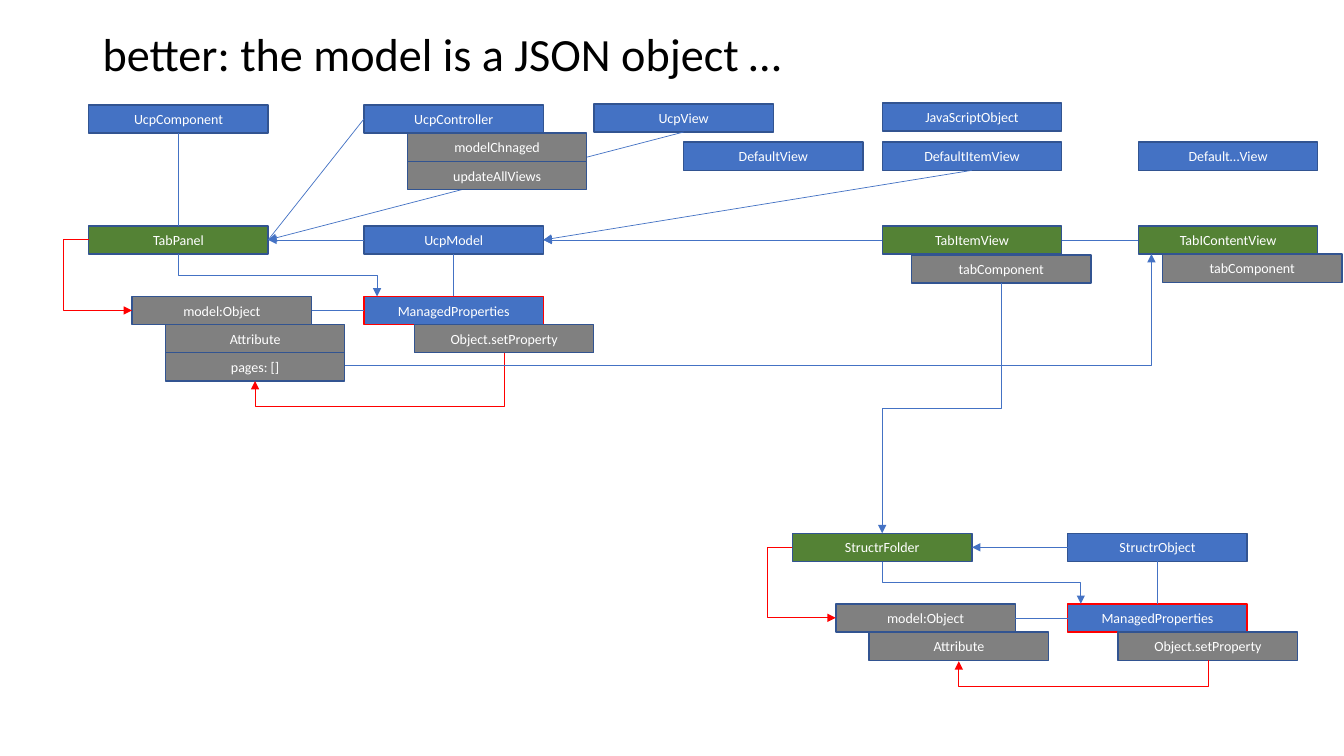
from lxml import etree
from pptx import Presentation
from pptx.dml.color import RGBColor
from pptx.enum import shapes, text
from pptx.oxml import ns
from pptx.util import Inches, Pt

COLORS = {"blue": "4472C4", "green": "548235", "gray": "808080", "edge": "325491",
          "red": "FF0000", "white": "FFFFFF", "black": "000000"}
W, H = 1.78, 0.28
TOP, LEFT, BOTTOM, RIGHT = range(4)


def rgb(name):
    return RGBColor.from_string(COLORS[name])


def add_run(p, wording, size, color):
    r = p.add_run()
    r.text = wording
    r.font.name = "Calibri"
    r.font.size = Pt(size)
    r.font.color.rgb = rgb(color)


def add_title(s, wording):
    sp = s.shapes.add_textbox(Inches(0.92), Inches(0.4), Inches(11.5), Inches(0.53))
    tf = sp.text_frame
    tf.word_wrap = True
    tf.margin_top = tf.margin_bottom = 0
    p = tf.paragraphs[0]
    p.line_spacing = 0.7
    add_run(p, wording, 33, "black")


def add_box(s, wording, x, y, fill="blue", edge="edge"):
    sp = s.shapes.add_shape(shapes.MSO_SHAPE.RECTANGLE,
                            Inches(x), Inches(y), Inches(W), Inches(H))
    sp.shadow.inherit = False
    sp.fill.solid()
    sp.fill.fore_color.rgb = rgb(fill)
    sp.line.color.rgb = rgb(edge)
    sp.line.width = Pt(1)
    tf = sp.text_frame
    tf.margin_top = tf.margin_bottom = 0
    tf.vertical_anchor = text.MSO_ANCHOR.MIDDLE
    p = tf.paragraphs[0]
    p.alignment = text.PP_ALIGN.CENTER
    add_run(p, wording, 10, "white")
    return sp


def style_line(c, color, arrow):
    c.line.color.rgb = rgb(color)
    c.line.width = Pt(0.5)
    if arrow:
        ln = c.line._get_or_add_ln()
        etree.SubElement(ln, ns.qn("a:tailEnd"), type="triangle")
    etree.SubElement(c._element.spPr, ns.qn("a:effectLst"))


def link(s, start, start_side, end, end_side, arrow=False):
    c = s.shapes.add_connector(shapes.MSO_CONNECTOR.STRAIGHT, 0, 0, 0, 0)
    c.begin_connect(start, start_side)
    c.end_connect(end, end_side)
    style_line(c, "blue", arrow)


def elbow(s, x1, y1, x2, y2, color="blue", bend=None, down=False):
    length = y2 - y1 if down else x2 - x1
    if down:
        cx, cy, dx = (x1 + x2) / 2, (y1 + y2) / 2, x2 - x1
        x1, y1, x2, y2 = cx - length / 2, cy + dx / 2, cx + length / 2, cy - dx / 2
    c = s.shapes.add_connector(shapes.MSO_CONNECTOR.ELBOW,
                               Inches(x1), Inches(y1), Inches(x2), Inches(y2))
    spPr = c._element.spPr
    if down:
        spPr.find(ns.qn("a:xfrm")).set("rot", "5400000")
    geom = spPr.find(ns.qn("a:prstGeom"))
    if bend is None:
        geom.set("prst", "bentConnector2")
    else:
        guides = geom.find(ns.qn("a:avLst"))
        if guides is None:
            guides = etree.SubElement(geom, ns.qn("a:avLst"))
        etree.SubElement(guides, ns.qn("a:gd"), name="adj1",
                         fmla=f"val {round(bend / length * 100000)}")
    style_line(c, color, True)


def add_component(s, x, y, name, parent, members):
    row = y + 0.7
    component = add_box(s, name, x, y, "green")
    base = add_box(s, parent, x + 2.73, y)
    model = add_box(s, "model:Object", x + 0.43, row, "gray")
    managed = add_box(s, "ManagedProperties", x + 2.73, row, edge="red")
    add_box(s, "Object.setProperty", x + 3.23, row + H, "gray")
    for i, member in enumerate(members, 1):
        add_box(s, member, x + 0.76, row + i * H, "gray")
    link(s, base, LEFT, component, RIGHT, True)
    link(s, managed, TOP, base, BOTTOM)
    link(s, managed, LEFT, model, RIGHT)
    elbow(s, x, y + H / 2, x + 0.43, row + H / 2, "red", -0.25)
    elbow(s, x + W / 2, y + H, x + 2.86, row, bend=0.21, down=True)
    drop = max(H * (len(members) - 1), 0.01)
    bottom = row + 2 * H
    elbow(s, x + 4.12, bottom, x + 1.65, bottom + drop, "red", drop + 0.25, True)
    return component, base


def main():
    prs = Presentation()
    prs.slide_width, prs.slide_height = Inches(13.33), Inches(7.5)
    s = prs.slides.add_slide(prs.slide_layouts[6])
    add_title(s, "better: the model is a JSON object …")

    ucp_component = add_box(s, "UcpComponent", 0.88, 1.04)
    controller = add_box(s, "UcpController", 3.61, 1.04)
    view = add_box(s, "UcpView", 5.89, 1.03)
    add_box(s, "JavaScriptObject", 8.75, 1.02)
    add_box(s, "DefaultView", 6.78, 1.41)
    item_base = add_box(s, "DefaultItemView", 8.75, 1.41)
    add_box(s, "Default…View", 11.29, 1.41)

    panel, ucp_model = add_component(s, 0.88, 2.24, "TabPanel", "UcpModel",
                                     ["Attribute", "pages: []"])
    add_component(s, 7.86, 5.29, "StructrFolder", "StructrObject", ["Attribute"])

    content = add_box(s, "TabIContentView", 11.29, 2.24, "green")
    link(s, content, LEFT, ucp_model, RIGHT, True)
    item = add_box(s, "TabItemView", 8.75, 2.24, "green")
    link(s, item, LEFT, ucp_model, RIGHT, True)
    link(s, item_base, BOTTOM, ucp_model, RIGHT, True)
    link(s, ucp_component, BOTTOM, panel, TOP)
    link(s, panel, RIGHT, controller, LEFT)
    link(s, view, BOTTOM, panel, RIGHT, True)

    for wording, x, y in [("modelChnaged", 4.04, 1.32), ("updateAllViews", 4.04, 1.6),
                          ("tabComponent", 9.04, 2.53), ("tabComponent", 11.53, 2.52)]:
        add_box(s, wording, x, y, "gray")

    elbow(s, 9.93, 2.81, 8.75, 5.29, bend=1.24, down=True)
    elbow(s, 3.42, 3.63, 11.42, 2.52)
    prs.save("out.pptx")


if __name__ == "__main__":
    main()
